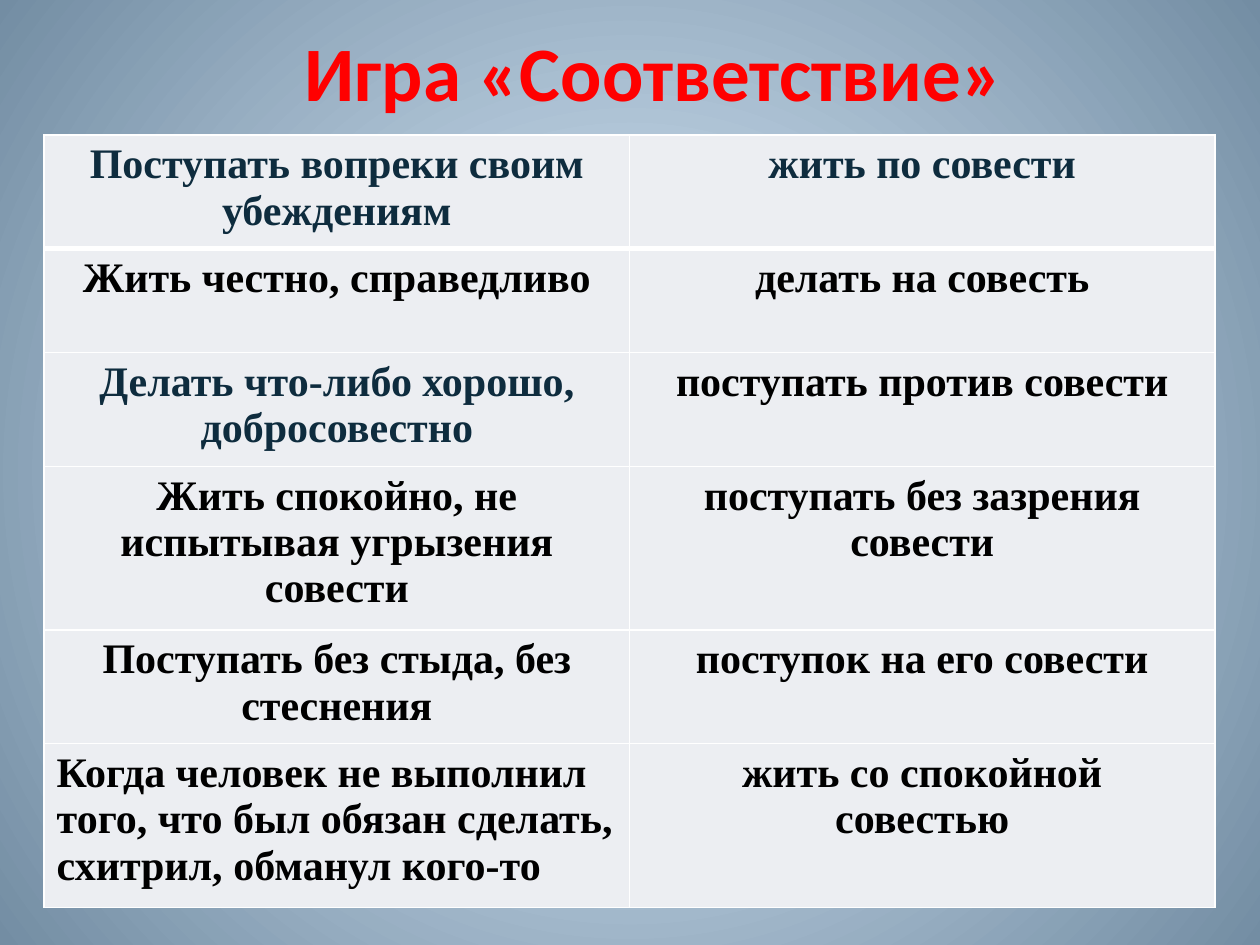
from pptx import Presentation
from pptx.dml.color import RGBColor
from pptx.enum.text import MSO_AUTO_SIZE, PP_ALIGN
from pptx.oxml.ns import qn
from pptx.oxml.xmlchemy import OxmlElement
from pptx.util import Cm, Pt

LEFT, MID = PP_ALIGN.LEFT, PP_ALIGN.CENTER
GROW = MSO_AUTO_SIZE.SHAPE_TO_FIT_TEXT
RED = RGBColor(0xFF, 0x00, 0x00)
BLACK = RGBColor(0x00, 0x00, 0x00)
NAVY = RGBColor(0x0E, 0x2C, 0x3E)
SLATE = RGBColor(0x45, 0x59, 0x78)
PALE = RGBColor(0xEC, 0xEE, 0xF2)
WHITE = RGBColor(0xFF, 0xFF, 0xFF)
GLOW = RGBColor(0xDF, 0xF0, 0xFF)
STEEL = RGBColor(0x73, 0x8D, 0xA3)

HEAD = {"name": "Calibri", "size": Pt(44), "bold": True}
BODY = {"name": "Times New Roman", "size": Pt(24), "bold": True}
HEIGHTS = [2.29, 2.1, 2.29, 3.3, 2.29, 3.3]
PAIRS = [
    ("Поступать вопреки своим убеждениям", NAVY, "жить по совести", NAVY),
    ("Жить честно, справедливо", BLACK, "делать на совесть", BLACK),
    ("Делать что-либо хорошо, добросовестно", NAVY,
     "поступать против совести", BLACK),
    ("Жить спокойно, не испытывая угрызения совести", BLACK,
     "поступать без зазрения совести", BLACK),
    ("Поступать без стыда, без стеснения", BLACK,
     "поступок на его совести", BLACK),
    ("Когда человек не выполнил того, что был обязан сделать, "
     "схитрил, обманул кого-то", BLACK,
     "жить со спокойной\vсовестью", BLACK),
]


def add_node(root, tag, **attrs):
    node = OxmlElement(tag)
    for key, val in attrs.items():
        node.set(key, str(val))
    root.append(node)
    return node


def make_line(root, tag, color, width):
    line = add_node(root, tag, w=Pt(width))
    add_node(add_node(line, "a:solidFill"), "a:srgbClr", val=color)
    return line


def write(frame, text, style, color, align=MID):
    frame.text = text
    para = frame.paragraphs[0]
    para.alignment = align
    for run in para.runs:
        for key, val in style.items():
            setattr(run.font, key, val)
        run.font.color.rgb = color
    return para.runs[0]


def paint_back(slide):
    fill = slide.background.fill
    fill.gradient()
    for stop, color in zip(fill.gradient_stops, (GLOW, STEEL)):
        stop.color.rgb = color
    line = next(slide.element.iter(qn("a:lin")))
    grad = line.getparent()
    grad.remove(line)
    ring = add_node(grad, "a:path", path="circle")
    add_node(ring, "a:fillToRect", l=50000, t=50000, r=50000, b=50000)


def add_title(slide):
    box = slide.shapes.add_textbox(Cm(4.67), Cm(0.38), Cm(17.04), Cm(2.13))
    frame = box.text_frame
    frame.word_wrap = False
    frame.auto_size = GROW
    run = write(frame, "Игра «Соответствие»", HEAD, RED)
    props = run.font._element
    props.insert(0, make_line(props, "a:ln", SLATE, 1))


def fill_cell(cell, row, text, color, align):
    write(cell.text_frame, text, BODY, color, align)
    props = cell._tc.get_or_add_tcPr()
    widths = {"L": 1, "R": 1, "T": 3 if row == 1 else 1,
              "B": 3 if row == 0 else 1}
    for side, width in widths.items():
        make_line(props, f"a:ln{side}", WHITE, width)
    cell.fill.solid()
    cell.fill.fore_color.rgb = PALE


def add_grid(slide):
    frame = slide.shapes.add_table(len(PAIRS), 2, Cm(0.89), Cm(2.72),
                                   Cm(23.6), Cm(sum(HEIGHTS)))
    table = frame.table
    table.first_row = table.horz_banding = False
    for row, (tall, pair) in enumerate(zip(HEIGHTS, PAIRS)):
        table.rows[row].height = Cm(tall)
        left, tint, right, shade = pair
        align = LEFT if row == len(PAIRS) - 1 else MID
        fill_cell(table.cell(row, 0), row, left, tint, align)
        fill_cell(table.cell(row, 1), row, right, shade, MID)


def main():
    deck = Presentation()
    deck.slide_width, deck.slide_height = Cm(25.4), Cm(19.05)
    slide = deck.slides.add_slide(deck.slide_layouts[6])
    paint_back(slide)
    add_title(slide)
    add_grid(slide)
    deck.save("out.pptx")


if __name__ == "__main__":
    main()
